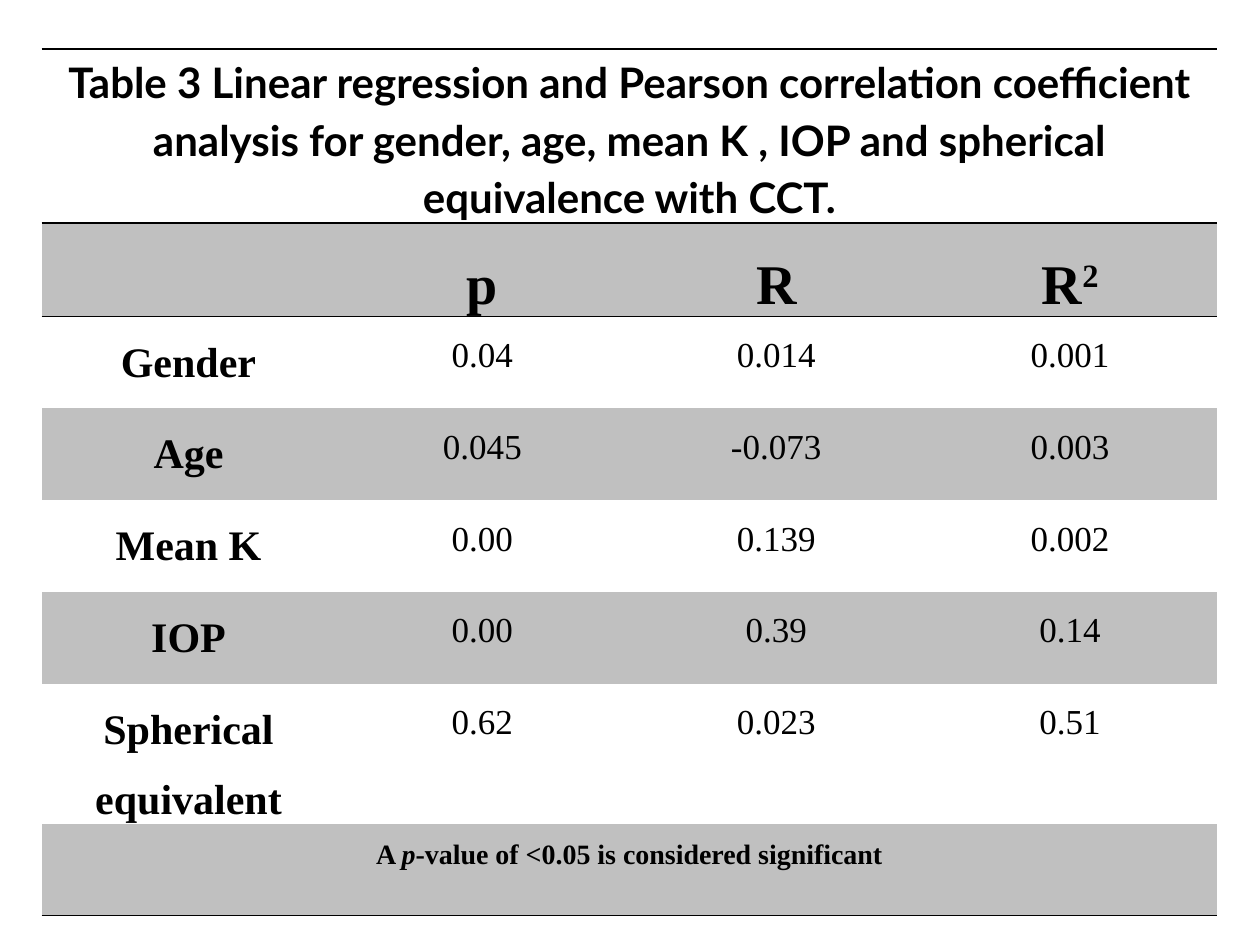
from dataclasses import dataclass

from lxml import etree
from pptx import Presentation
from pptx.dml.color import RGBColor
from pptx.enum.text import PP_ALIGN
from pptx.oxml.ns import qn
from pptx.util import Inches, Pt

CENTER = PP_ALIGN.CENTER
PLAIN_TABLE_STYLE = "{2D5ABB26-0587-4C30-8999-92F81FD0307C}"


@dataclass(frozen=True)
class Theme:
    ink: str = "000000"
    band: str = "C0C0C0"
    title_font: str = "Lato"
    body_font: str = "Times New Roman"
    title_size: int = 24
    heading_size: int = 32
    label_size: int = 24
    value_size: int = 20
    note_size: int = 16
    rule_width: int = 1


THEME = Theme()
TITLE = (
    "Table 3 Linear regression and Pearson correlation coefficient analysis "
    "for gender, age, mean K , IOP and spherical equivalence with CCT."
)
RESULTS = [
    ("Gender", "0.04", "0.014", "0.001"),
    ("Age", "0.045", "-0.073", "0.003"),
    ("Mean K", "0.00", "0.139", "0.002"),
    ("IOP", "0.00", "0.39", "0.14"),
    ("Spherical equivalent", "0.62", "0.023", "0.51"),
]
ROW_HEIGHTS = [1.29, 0.73, 0.73, 0.73, 0.73, 0.73, 1.08, 0.73]
COLUMN_COUNT = 4
NOTE_ROW = len(ROW_HEIGHTS) - 1
RULES = {0: ("lnT", "lnB"), 1: ("lnT",), NOTE_ROW: ("lnB",)}


def add_rule(cell, side):
    props = cell._tc.get_or_add_tcPr()
    line = etree.SubElement(props, qn(f"a:{side}"), w=str(Pt(THEME.rule_width)))
    fill = etree.SubElement(line, qn("a:solidFill"))
    etree.SubElement(fill, qn("a:srgbClr"), val=THEME.ink)


def style_cell(cell, row):
    cell.margin_left = cell.margin_right = 0
    cell.margin_top = cell.margin_bottom = 0
    for side in RULES.get(row, ()):
        add_rule(cell, side)
    if row % 2:
        cell.fill.solid()
        cell.fill.fore_color.rgb = RGBColor.from_string(THEME.band)
    else:
        cell.fill.background()


def write(cell, parts, size, bold=True, font=THEME.body_font, spacing=1.5):
    paragraph = cell.text_frame.paragraphs[0]
    paragraph.alignment = CENTER
    paragraph.line_spacing = spacing
    for part in parts:
        run = paragraph.add_run()
        run.text = part
        run.font.name = font
        run.font.size = Pt(size)
        run.font.bold = bold
        run.font.color.rgb = RGBColor.from_string(THEME.ink)
    return paragraph.runs


def add_regression_table(slide):
    frame = slide.shapes.add_table(
        len(ROW_HEIGHTS), COLUMN_COUNT,
        Inches(0.33), Inches(0.39), Inches(9.33), Inches(sum(ROW_HEIGHTS)),
    )
    table = frame.table
    table.first_row = table.horz_banding = False
    table._tbl.tblPr.find(qn("a:tableStyleId")).text = PLAIN_TABLE_STYLE
    for row, height in enumerate(ROW_HEIGHTS):
        table.rows[row].height = Inches(height)
        for column in range(COLUMN_COUNT):
            style_cell(table.cell(row, column), row)
    for row in (0, NOTE_ROW):
        table.cell(row, 0).merge(table.cell(row, COLUMN_COUNT - 1))
    return table


def fill_headings(table):
    for column, parts in enumerate((["p"], ["R"], ["R", "2"]), start=1):
        runs = write(table.cell(1, column), parts, THEME.heading_size)
    runs[1].font._element.set("baseline", "30000")


def fill_results(table):
    for row, (label, *values) in enumerate(RESULTS, start=2):
        write(table.cell(row, 0), [label], THEME.label_size)
        for column, value in enumerate(values, start=1):
            write(table.cell(row, column), [value], THEME.value_size, bold=False)


def fill_note(table):
    parts = ["A ", "p", "-value of <0.05 is considered significant"]
    runs = write(table.cell(NOTE_ROW, 0), parts, THEME.note_size)
    runs[1].font.italic = True


def main():
    deck = Presentation()
    deck.slide_width = Inches(10)
    deck.slide_height = Inches(7.5)
    slide = deck.slides.add_slide(deck.slide_layouts[6])
    table = add_regression_table(slide)
    write(table.cell(0, 0), [TITLE], THEME.title_size,
          font=THEME.title_font, spacing=1.15)
    fill_headings(table)
    fill_results(table)
    fill_note(table)
    deck.save("out.pptx")


if __name__ == "__main__":
    main()
